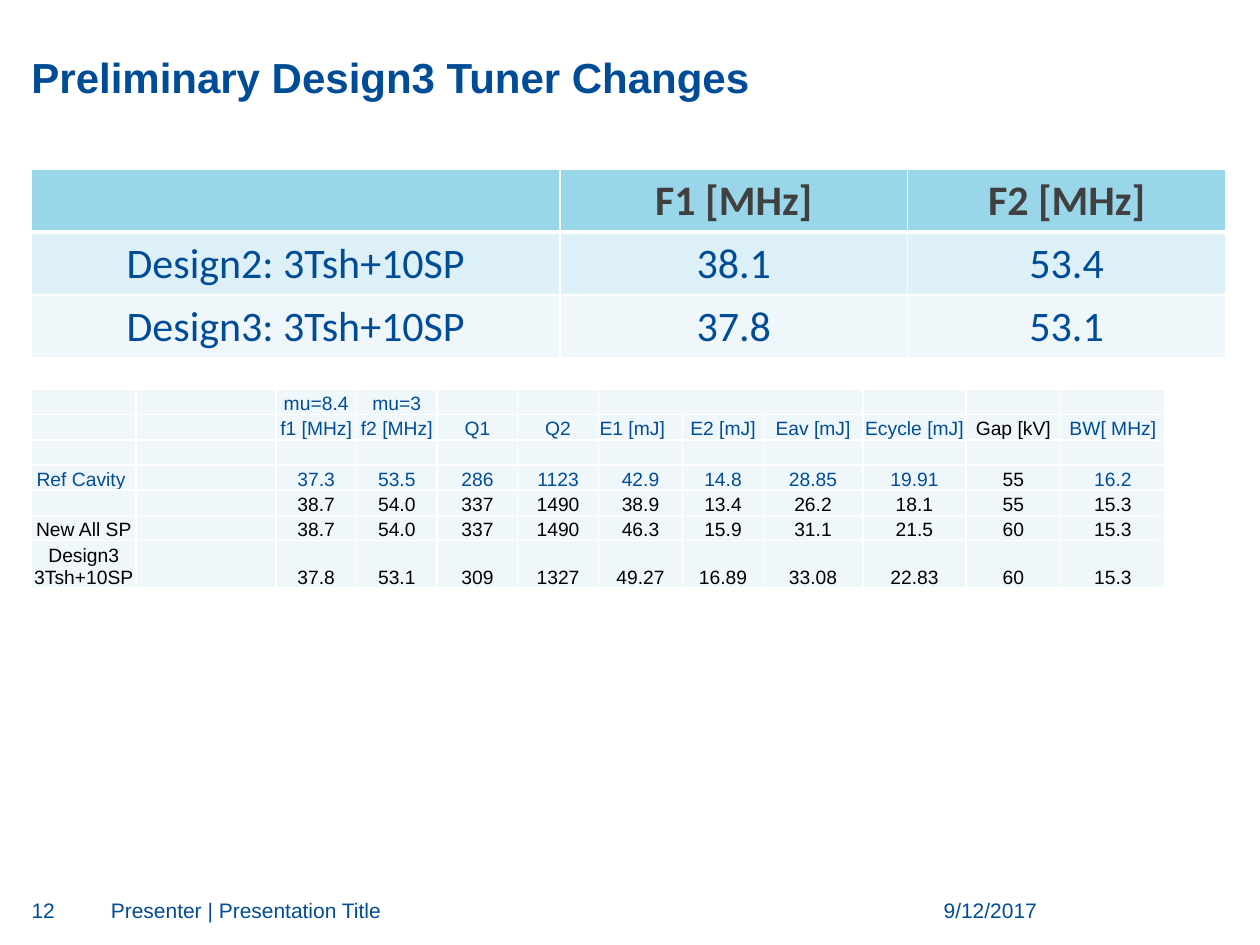
from lxml.etree import SubElement
from pptx import Presentation
from pptx.dml.color import RGBColor as RGB
from pptx.enum.text import MSO_ANCHOR as ANCHOR, PP_ALIGN as ALIGN
from pptx.oxml.ns import qn
from pptx.text.text import Font
from pptx.util import Inches, Pt

COLORS = {"blue": "004C97", "dark": "404040", "black": "000000", "white": "FFFFFF",
          "header": "99D6EA", "band": "DEF0F7", "pale": "EFF7FB"}
WIDTH, HEIGHT = Inches(10), Inches(7.5)
GRID_COLS, GRID_ROWS = 1000, 750
MARGINS = ("margin_left", "margin_top", "margin_right", "margin_bottom")

TITLE_BOX = (25, 11, 950, 70)
FOOTER_BOX = (25, 712, 798, 26)
SUMMARY_BOX = (25, 134, 948, 123)
DETAIL_BOX = (25, 309, 900, 140)

SUMMARY = [["", "F1 [MHz]", "F2 [MHz]"],
           ["Design2: 3Tsh+10SP", "38.1", "53.4"],
           ["Design3: 3Tsh+10SP", "37.8", "53.1"]]
SUMMARY_COLS = [420, 276, 253]
DETAIL = [
    ["", "", "mu=8.4", "mu=3"] + [""] * 8,
    ["", "", "f1 [MHz]", "f2 [MHz]", "Q1", "Q2", "E1 [mJ]", "E2 [mJ]", "Eav [mJ]",
     "Ecycle [mJ]", "Gap [kV]", "BW[ MHz]"],
    [""] * 12,
    ["Ref Cavity ", "", "37.3", "53.5", "286", "1123", "42.9", "14.8", "28.85", "19.91", "55", "16.2"],
    ["", "", "38.7", "54.0", "337", "1490", "38.9", "13.4", "26.2", "18.1", "55", "15.3"],
    ["New All SP", "", "38.7", "54.0", "337", "1490", "46.3", "15.9", "31.1", "21.5", "60", "15.3"],
    ["Design3 3Tsh+10SP", "", "37.8", "53.1", "309", "1327", "49.27", "16.89", "33.08", "22.83",
     "60", "15.3"],
]
DETAIL_COLS = [83, 111, 64, 64, 64, 64, 67, 64, 79, 82, 75, 83]
E1_COL, GAP_COL = 6, 10


def apply(obj, values):
    """Set every attribute in values on obj."""
    for name, value in values.items():
        setattr(obj, name, value)


def place(box):
    """Turn a box in grid units into slide lengths."""
    x, y, w, h = box
    return (WIDTH * x // GRID_COLS, HEIGHT * y // GRID_ROWS,
            WIDTH * w // GRID_COLS, HEIGHT * h // GRID_ROWS)


def write(p, text, color, align, **fmt):
    """Write one formatted run, or size the empty paragraph."""
    p.alignment = align
    if text:
        r = p.add_run()
        r.text = text
        font = r.font
    else:
        font = Font(p._p.get_or_add_endParaRPr())
    apply(font, fmt)
    font.color.rgb = RGB.from_string(COLORS[color])


def add_text(s, box, text, align=ALIGN.LEFT, anchor=ANCHOR.TOP, **fmt):
    """Add a text box without margins."""
    tf = s.shapes.add_textbox(*place(box)).text_frame
    apply(tf, dict.fromkeys(MARGINS, 0) | {"word_wrap": True, "vertical_anchor": anchor})
    write(tf.paragraphs[0], text, "blue", align, name="Arial", **fmt)


def add_borders(cell, **widths):
    """Draw the four white cell borders, one point wide unless given."""
    tcPr = cell._tc.get_or_add_tcPr()
    for i, side in enumerate("LRTB"):
        ln = tcPr.makeelement(qn(f"a:ln{side}"), {"w": str(Pt(widths.get(side, 1)))})
        fill = SubElement(ln, qn("a:solidFill"))
        SubElement(fill, qn("a:srgbClr"), val=COLORS["white"])
        tcPr.insert(i, ln)


def add_grid(s, box, rows, weights):
    """Add a table with weighted columns and equal rows."""
    x, y, w, h = place(box)
    table = s.shapes.add_table(len(rows), len(weights), x, y, w, h).table
    for col, weight in zip(table.columns, weights):
        col.width = w * weight // sum(weights)
    for row in table.rows:
        row.height = h // len(rows)
    return table


def fill_cell(cell, text, fill, color, align=ALIGN.CENTER, **fmt):
    """Colour a cell and write its text."""
    cell.fill.solid()
    cell.fill.fore_color.rgb = RGB.from_string(COLORS[fill])
    write(cell.text_frame.paragraphs[0], text, color, align, **fmt)


def add_summary(s, box):
    """Add the large frequency table."""
    table = add_grid(s, box, SUMMARY, SUMMARY_COLS)
    borders = [{"B": 3}, {"T": 3}, {}]
    for i, (row, fill) in enumerate(zip(SUMMARY, ("header", "band", "pale"))):
        for j, text in enumerate(row):
            cell = table.cell(i, j)
            fill_cell(cell, text, fill, "blue" if i else "dark",
                      name="Calibri", size=Pt(24), bold=i == 0)
            add_borders(cell, **borders[i])


def add_detail(s, box):
    """Add the small table of cavity figures."""
    table = add_grid(s, box, DETAIL, DETAIL_COLS)
    insets = dict.fromkeys(MARGINS, Inches(0.01)) | {"margin_bottom": 0}
    for i, row in enumerate(DETAIL):
        for j, text in enumerate(row):
            cell = table.cell(i, j)
            apply(cell, insets | {"vertical_anchor": ANCHOR.BOTTOM})
            fill_cell(cell, text, "pale", "black" if i > 3 or j == GAP_COL else "blue",
                      ALIGN.LEFT if (i, j) == (1, E1_COL) else ALIGN.CENTER,
                      name="Arial", size=Pt(11), bold=False)
            add_borders(cell)
    table.cell(0, E1_COL).merge(table.cell(0, E1_COL + 2))


def add_footer(s, box):
    """Add the slide number, presenter line and date."""
    x, y, w, h = box
    parts = [(0, 49, "12", ALIGN.LEFT),
             (63, 588, "Presenter | Presentation Title", ALIGN.LEFT),
             (w - 118, 118, "9/12/2017", ALIGN.RIGHT)]
    for dx, width, text, align in parts:
        add_text(s, (x + dx, y, width, h), text, align, size=Pt(12))


def main():
    """Build and save the slide."""
    prs = Presentation()
    apply(prs, {"slide_width": WIDTH, "slide_height": HEIGHT})
    s = prs.slides.add_slide(prs.slide_layouts[6])
    add_text(s, TITLE_BOX, "Preliminary Design3 Tuner Changes", anchor=ANCHOR.BOTTOM,
             size=Pt(24), bold=True)
    add_summary(s, SUMMARY_BOX)
    add_detail(s, DETAIL_BOX)
    add_footer(s, FOOTER_BOX)
    prs.save("out.pptx")


if __name__ == "__main__":
    main()
